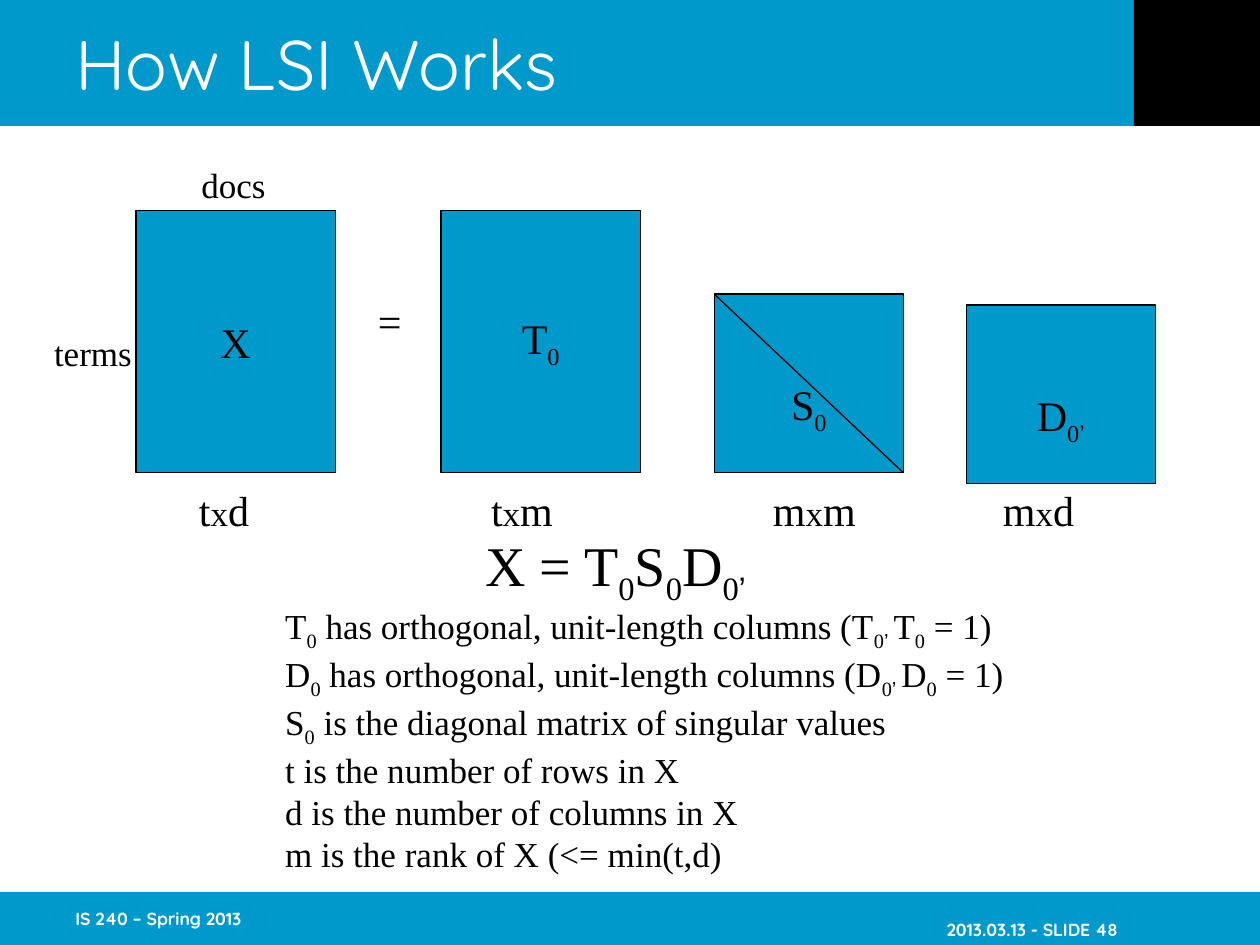
from dataclasses import dataclass

from lxml import etree
from pptx import Presentation
from pptx.dml.color import RGBColor
from pptx.enum.shapes import MSO_CONNECTOR, MSO_SHAPE
from pptx.enum.text import MSO_ANCHOR, MSO_AUTO_SIZE, PP_ALIGN
from pptx.oxml.ns import qn
from pptx.util import Cm, Pt

RECTANGLE = MSO_SHAPE.RECTANGLE
STRAIGHT = MSO_CONNECTOR.STRAIGHT
TOP, MIDDLE = MSO_ANCHOR.TOP, MSO_ANCHOR.MIDDLE
LEFT, CENTER, RIGHT = PP_ALIGN.LEFT, PP_ALIGN.CENTER, PP_ALIGN.RIGHT
GROW = MSO_AUTO_SIZE.SHAPE_TO_FIT_TEXT


@dataclass(frozen=True)
class Theme:
    blue: RGBColor = RGBColor(0x00, 0x99, 0xCC)
    black: RGBColor = RGBColor(0x00, 0x00, 0x00)
    white: RGBColor = RGBColor(0xFF, 0xFF, 0xFF)
    heading_font: str = "Quicksand"
    body_font: str = "Times New Roman"
    prime_font: str = "Arial"
    title: int = 40
    formula: int = 32
    symbol: int = 24
    body: int = 20
    footer: int = 10
    outline: float = 0.75


theme = Theme()


def write(box, text, size=theme.body, font=theme.body_font, color=theme.black,
          bold=False, align=LEFT, anchor=TOP, wrap=False, marked_size=None):
    """Underscores enclose subscripts, or text in marked_size when given."""
    frame = box.text_frame
    frame.word_wrap = wrap
    frame.vertical_anchor = anchor
    for index, line in enumerate(text.split("\n")):
        para = frame.add_paragraph() if index else frame.paragraphs[0]
        para.alignment = align
        for position, piece in enumerate(line.split("_")):
            if not piece:
                continue
            marked = position % 2 == 1
            span = para.add_run()
            span.text = piece
            span.font.size = Pt(marked_size if marked and marked_size else size)
            span.font.name = theme.prime_font if "’" in piece else font
            span.font.color.rgb = color
            span.font.bold = bold
            if marked and not marked_size:
                span.font._element.set("baseline", "-25000")


deck = Presentation()
deck.slide_width, deck.slide_height = Cm(25.4), Cm(19.05)
page = deck.slides.add_slide(deck.slide_layouts[6])
shapes = page.shapes

for left, top, width, height, color in (
    (0, 0, 25.4, 2.54, theme.blue),
    (0, 17.98, 25.4, 1.07, theme.blue),
    (22.86, 0, 2.54, 2.54, theme.black),
):
    band = shapes.add_shape(RECTANGLE, Cm(left), Cm(top), Cm(width), Cm(height))
    band.shadow.inherit = False
    band.fill.solid()
    band.fill.fore_color.rgb = color
    band.line.fill.background()

for text, left, top, width, height, size, bold, align in (
    ("How LSI Works", 1.27, 0, 21.59, 2.54, theme.title, False, LEFT),
    ("IS 240 – Spring 2013", 1.27, 17.98, 5.28, 1.07, theme.footer, True, LEFT),
    ("2013.03.13 - SLIDE 48", 17.5, 18.2, 5.28, 1.07, theme.footer, True, RIGHT),
):
    box = shapes.add_textbox(Cm(left), Cm(top), Cm(width), Cm(height))
    write(box, text, size=size, font=theme.heading_font, color=theme.white,
          bold=bold, align=align, anchor=MIDDLE, wrap=True)

tall, square = (4.02, 5.29), (3.81, 3.6)
for text, left, top, (width, height), inset in (
    ("X", 2.74, 4.24, tall, 0.13),
    ("T_0_", 8.89, 4.24, tall, 0.13),
    ("S_0_", 14.4, 5.93, square, 1.1),
    ("D_0__’_", 19.48, 6.15, square, 1.1),
):
    matrix = shapes.add_shape(RECTANGLE, Cm(left), Cm(top), Cm(width), Cm(height))
    matrix.shadow.inherit = False
    matrix.fill.solid()
    matrix.fill.fore_color.rgb = theme.blue
    matrix.line.color.rgb = theme.black
    matrix.line.width = Pt(theme.outline)
    matrix.text_frame.margin_top = Cm(inset)
    write(matrix, text, size=theme.symbol, align=CENTER, anchor=MIDDLE)

diagonal = shapes.add_connector(STRAIGHT, Cm(14.4), Cm(5.93), Cm(18.21), Cm(9.53))
diagonal.line.color.rgb = theme.black
diagonal.line.width = Pt(theme.outline)
etree.SubElement(diagonal._element.spPr, qn("a:effectLst"))

dimensions = shapes.add_textbox(Cm(3.76), Cm(9.65), Cm(19), Cm(1.27))
write(dimensions, "t_x_d\tt_x_m\tm_x_m\tm_x_d", size=theme.symbol,
      marked_size=theme.body, wrap=True)
properties = dimensions.text_frame.paragraphs[0]._p.get_or_add_pPr()
tabs = etree.SubElement(properties, qn("a:tabLst"))
for stop in (5.89, 11.57, 16.21):
    etree.SubElement(tabs, qn("a:tab"), pos=str(Cm(stop)), algn="l")

notes = """T_0_ has orthogonal, unit-length columns (T_0__’ _T_0_ = 1)
D_0_ has orthogonal, unit-length columns (D_0__’ _D_0_ = 1)
S_0_ is the diagonal matrix of singular values
t is the number of rows in X
d is the number of columns in X
m is the rank of X (<= min(t,d)"""

for text, left, top, width, height, size in (
    ("docs", 3.81, 3.18, 1.8, 1.09, theme.body),
    ("terms", 0.84, 6.56, 2.08, 1.09, theme.body),
    ("=", 7.37, 5.84, 0.99, 1.27, theme.symbol),
    ("X = T_0_S_0_D_0__’_", 9.53, 10.58, 6.02, 1.6, theme.formula),
    (notes, 5.5, 12.07, 15.09, 5.33, theme.body),
):
    box = shapes.add_textbox(Cm(left), Cm(top), Cm(width), Cm(height))
    box.text_frame.auto_size = GROW
    write(box, text, size=size)

deck.save("out.pptx")
